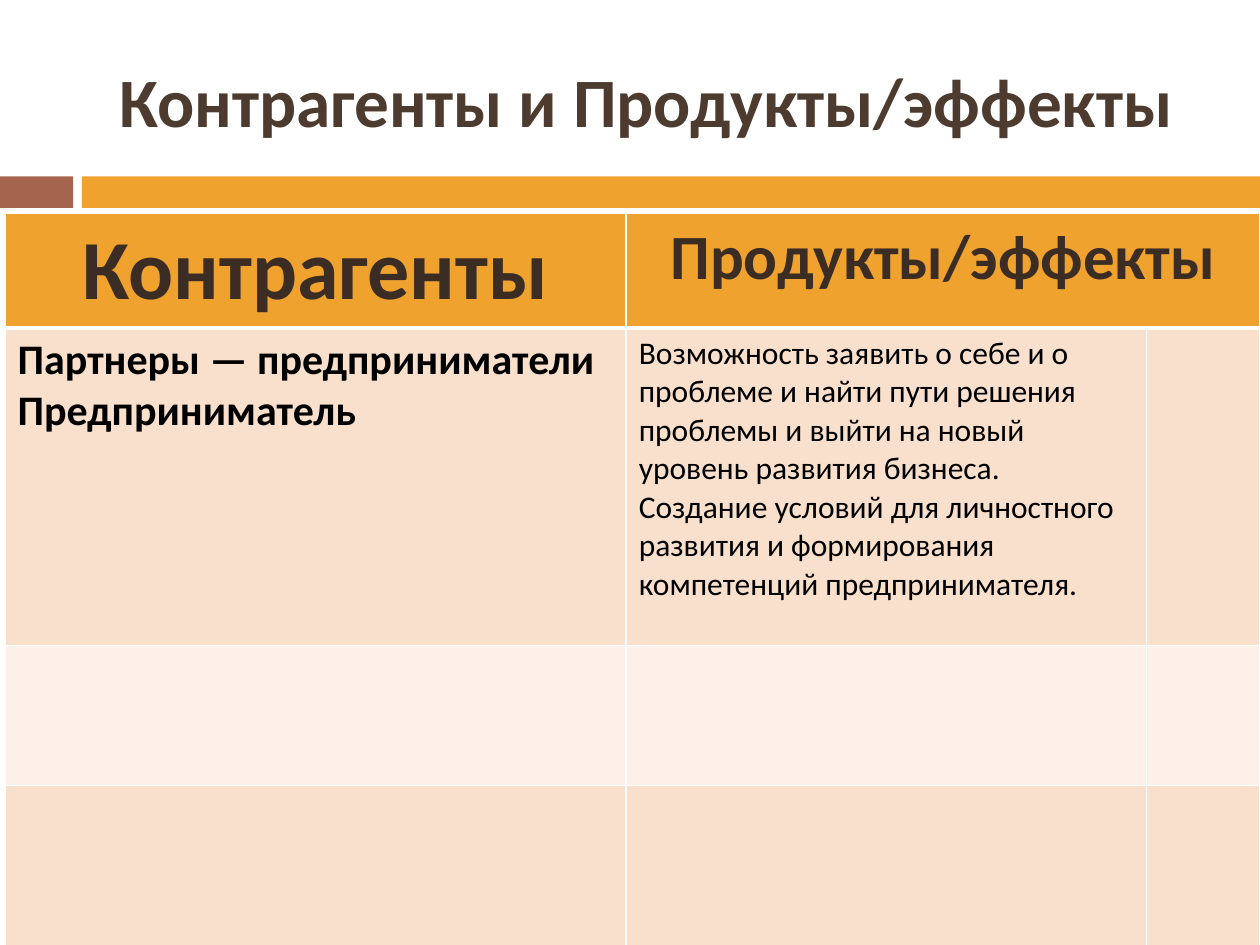
from dataclasses import dataclass

from lxml import etree
from pptx import Presentation
from pptx.dml.color import RGBColor
from pptx.enum.shapes import MSO_SHAPE
from pptx.enum.text import MSO_ANCHOR, PP_ALIGN
from pptx.oxml.ns import qn
from pptx.util import Inches, Pt


@dataclass(frozen=True)
class Theme:
    font: str = "Calibri"
    title: str = "4E3B30"
    heading: str = "3B2C24"
    body: str = "000000"
    brown: str = "A5644E"
    orange: str = "F0A22E"
    band_dark: str = "F9E0CD"
    band_light: str = "FCF0E8"
    border: str = "FFFFFF"
    title_size: float = 39.6
    partners_heading_size: int = 48
    effects_heading_size: int = 36
    partners_size: int = 24
    effects_size: int = 18


theme = Theme()


def write_text(frame, lines, size, color, bold, align):
    frame.text = "\n".join(lines)
    for paragraph in frame.paragraphs:
        paragraph.alignment = align
        font = paragraph.runs[0].font
        font_format = {"name": theme.font, "size": Pt(size), "bold": bold}
        for attribute, value in font_format.items():
            setattr(font, attribute, value)
        font.color.rgb = RGBColor.from_string(color)


def set_borders(cell, widths):
    properties = cell._tc.get_or_add_tcPr()
    for position, (side, width) in enumerate(widths.items()):
        line = etree.Element(qn(f"a:ln{side}"), w=str(Pt(width)))
        fill = etree.SubElement(line, qn("a:solidFill"))
        etree.SubElement(fill, qn("a:srgbClr"), val=theme.border)
        properties.insert(position, line)


presentation = Presentation()
presentation.slide_width = Inches(10)
presentation.slide_height = Inches(7.5)
slide = presentation.slides.add_slide(presentation.slide_layouts[5])

# Two-part stripe under the title
for left, width, color in ((0, 0.58, theme.brown), (0.65, 9.35, theme.orange)):
    stripe = slide.shapes.add_shape(
        MSO_SHAPE.RECTANGLE, Inches(left), Inches(1.4), Inches(width), Inches(0.25))
    stripe.shadow.inherit = False
    stripe.fill.solid()
    stripe.fill.fore_color.rgb = RGBColor.from_string(color)
    stripe.line.fill.background()

# Title
title = slide.shapes.title
title_box = {"left": 0.67, "top": 0.25, "width": 8.92, "height": 1.08}
for attribute, value in title_box.items():
    setattr(title, attribute, Inches(value))
title.text_frame.vertical_anchor = MSO_ANCHOR.MIDDLE
write_text(title.text_frame, ["Контрагенты и Продукты/эффекты"],
           theme.title_size, theme.title, True, PP_ALIGN.CENTER)

# Table grid
column_widths = (4.93, 4.13, 0.9)
row_heights = (0.91, 2.52, 1.11, 1.27)
row_fills = (theme.orange, theme.band_dark, theme.band_light, theme.band_dark)
counterparties = slide.shapes.add_table(
    len(row_heights), len(column_widths), Inches(0.04), Inches(1.69),
    Inches(sum(column_widths)), Inches(sum(row_heights))).table
for column, width in zip(counterparties.columns, column_widths):
    column.width = Inches(width)
for row, height in zip(counterparties.rows, row_heights):
    row.height = Inches(height)
counterparties.cell(0, 1).merge(counterparties.cell(0, 2))

# Banded fills and white borders, heavier below the heading row
for row_index, (row, color) in enumerate(zip(counterparties.rows, row_fills)):
    for cell in row.cells:
        cell.fill.solid()
        cell.fill.fore_color.rgb = RGBColor.from_string(color)
        set_borders(cell, {"L": 1, "R": 1,
                           "T": 3 if row_index == 1 else 1,
                           "B": 3 if row_index == 0 else 1})

# Headings
headings = (("Контрагенты", theme.partners_heading_size),
            ("Продукты/эффекты", theme.effects_heading_size))
for column_index, (heading, size) in enumerate(headings):
    write_text(counterparties.cell(0, column_index).text_frame, [heading],
               size, theme.heading, True, PP_ALIGN.CENTER)

# Counterparties and what they gain
entries = (
    (["Партнеры — предприниматели", "Предприниматель"], theme.partners_size, True),
    (["Возможность заявить о себе и о проблеме и найти пути решения проблемы "
      "и выйти на новый уровень развития бизнеса.",
      "Создание условий для личностного развития и формирования компетенций "
      "предпринимателя."], theme.effects_size, False),
)
for column_index, (lines, size, bold) in enumerate(entries):
    write_text(counterparties.cell(1, column_index).text_frame, lines,
               size, theme.body, bold, PP_ALIGN.LEFT)

presentation.save("out.pptx")
